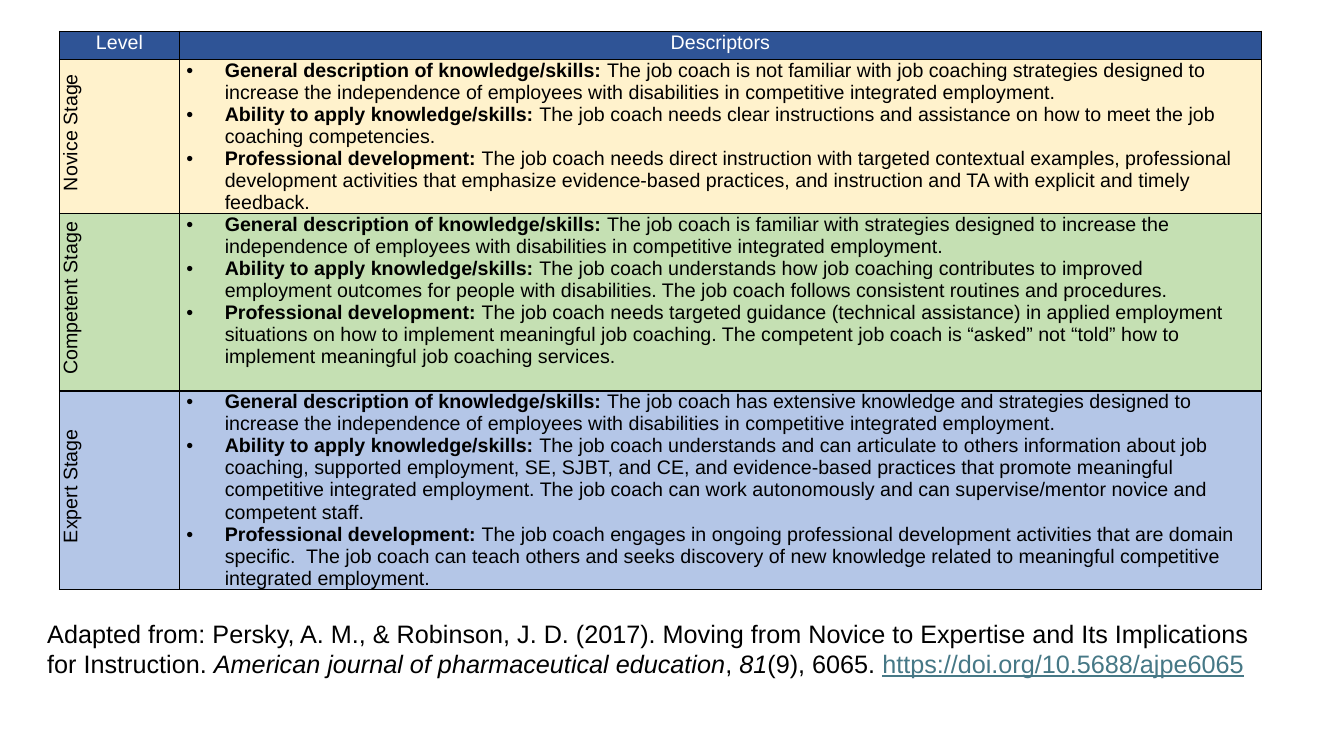
from lxml import etree
from pptx import Presentation
from pptx.dml.color import RGBColor
from pptx.enum.text import PP_ALIGN
from pptx.oxml.ns import qn
from pptx.util import Inches, Pt

CENTER = PP_ALIGN.CENTER
FONT = "Arial"
SLIDE_W, SLIDE_H = 13.33, 7.5
TABLE_LEFT, TABLE_TOP = 0.59, 0.31
COLS = [1.19, 10.73]
ROWS = [0.28, 1.42, 1.76, 1.85]
COLORS = {
    "header": "2F5496",
    "novice": "FFF2CC",
    "competent": "C5E0B3",
    "expert": "B4C6E7",
    "text": "000000",
    "white": "FFFFFF",
    "link": "467886",
}
HEADERS = ["Level", "Descriptors"]
TOPICS = [
    "General description of knowledge/skills: ",
    "Ability to apply knowledge/skills: ",
    "Professional development: ",
]
STAGES = [
    ("Novice Stage", "novice", [
        "The job coach is not familiar with job coaching strategies designed to increase "
        "the independence of employees with disabilities in competitive integrated employment.",
        "The job coach needs clear instructions and assistance on how to meet the job "
        "coaching competencies.",
        "The job coach needs direct instruction with targeted contextual examples, "
        "professional development activities that emphasize evidence-based practices, "
        "and instruction and TA with explicit and timely feedback.",
    ]),
    ("Competent Stage", "competent", [
        "The job coach is familiar with strategies designed to increase the independence "
        "of employees with disabilities in competitive integrated employment.",
        "The job coach understands how job coaching contributes to improved employment "
        "outcomes for people with disabilities. The job coach follows consistent routines "
        "and procedures.",
        "The job coach needs targeted guidance (technical assistance) in applied employment "
        "situations on how to implement meaningful job coaching. The competent job coach is "
        "“asked” not “told” how to implement meaningful job coaching services.",
    ]),
    ("Expert Stage", "expert", [
        "The job coach has extensive knowledge and strategies designed to increase the "
        "independence of employees with disabilities in competitive integrated employment.",
        "The job coach understands and can articulate to others information about job "
        "coaching, supported employment, SE, SJBT, and CE, and evidence-based practices that "
        "promote meaningful competitive integrated employment. The job coach can work "
        "autonomously and can supervise/mentor novice and competent staff.",
        "The job coach engages in ongoing professional development activities that are "
        "domain specific.  The job coach can teach others and seeks discovery of new "
        "knowledge related to meaningful competitive integrated employment.",
    ]),
]
CITATION = [
    ("Adapted from: Persky, A. M., & Robinson, J. D. (2017). Moving from Novice to "
     "Expertise and Its Implications for Instruction. ", {}),
    ("American journal of pharmaceutical education", {"italic": True}),
    (", ", {}),
    ("81", {"italic": True}),
    ("(9), 6065. ", {}),
    ("https://doi.org/10.5688/ajpe6065", {"color": "link", "underline": True}),
]


def add_run(p, text, size=14, color="text", bold=False, italic=False, underline=False):
    r = p.add_run()
    r.text = text
    font = r.font
    font.name, font.size = FONT, Pt(size)
    font.bold, font.italic, font.underline = bold, italic, underline
    font.color.rgb = RGBColor.from_string(COLORS[color])


def set_indent(p, left, first=0):
    pPr = p._p.get_or_add_pPr()
    pPr.set("marL", str(Inches(left)))
    pPr.set("indent", str(Inches(first)))
    return pPr


def add_bullet(p):
    pPr = set_indent(p, 0.38, -0.38)
    etree.SubElement(pPr, qn("a:buFont"), typeface=FONT)
    etree.SubElement(pPr, qn("a:buChar"), char="•")


def style_cell(cell, color):
    """Set margins, a thin black border on each side, and the fill."""
    cell.margin_left = cell.margin_right = Inches(0.07)
    cell.margin_top = cell.margin_bottom = 0
    tcPr = cell._tc.get_or_add_tcPr()
    for side in ("lnL", "lnR", "lnT", "lnB"):
        ln = etree.SubElement(tcPr, qn(f"a:{side}"), w=str(Pt(1)))
        fill = etree.SubElement(ln, qn("a:solidFill"))
        etree.SubElement(fill, qn("a:srgbClr"), val=COLORS["text"])
    cell.fill.solid()
    cell.fill.fore_color.rgb = RGBColor.from_string(COLORS[color])


def fill_header(cell, text):
    style_cell(cell, "header")
    p = cell.text_frame.paragraphs[0]
    p.alignment = CENTER
    add_run(p, text, color="white")


def fill_stage(cell, text, color):
    style_cell(cell, color)
    cell._tc.get_or_add_tcPr().set("vert", "vert270")
    p = cell.text_frame.paragraphs[0]
    p.alignment = CENTER
    set_indent(p, 0.08)
    add_run(p, text)


def fill_descriptors(cell, descriptors, color):
    style_cell(cell, color)
    tf = cell.text_frame
    for i, (topic, descriptor) in enumerate(zip(TOPICS, descriptors)):
        p = tf.add_paragraph() if i else tf.paragraphs[0]
        add_bullet(p)
        add_run(p, topic, bold=True)
        add_run(p, descriptor)


def add_stage_table(s):
    table = s.shapes.add_table(
        len(ROWS), len(COLS), Inches(TABLE_LEFT), Inches(TABLE_TOP),
        Inches(sum(COLS)), Inches(sum(ROWS))).table
    table.first_row = table.horz_banding = False
    for column, width in zip(table.columns, COLS):
        column.width = Inches(width)
    for row, height in zip(table.rows, ROWS):
        row.height = Inches(height)
    for col, header in enumerate(HEADERS):
        fill_header(table.cell(0, col), header)
    for row, (stage, color, descriptors) in enumerate(STAGES, start=1):
        fill_stage(table.cell(row, 0), stage, color)
        fill_descriptors(table.cell(row, 1), descriptors, color)


def add_citation(s):
    tb = s.shapes.add_textbox(Inches(0.37), Inches(6.08), Inches(12.15), Inches(1.01))
    tf = tb.text_frame
    tf.word_wrap = True
    for text, style in CITATION:
        add_run(tf.paragraphs[0], text, size=18, **style)


def main():
    prs = Presentation()
    prs.slide_width, prs.slide_height = Inches(SLIDE_W), Inches(SLIDE_H)
    s = prs.slides.add_slide(prs.slide_layouts[6])
    add_stage_table(s)
    add_citation(s)
    prs.save("out.pptx")


if __name__ == "__main__":
    main()
